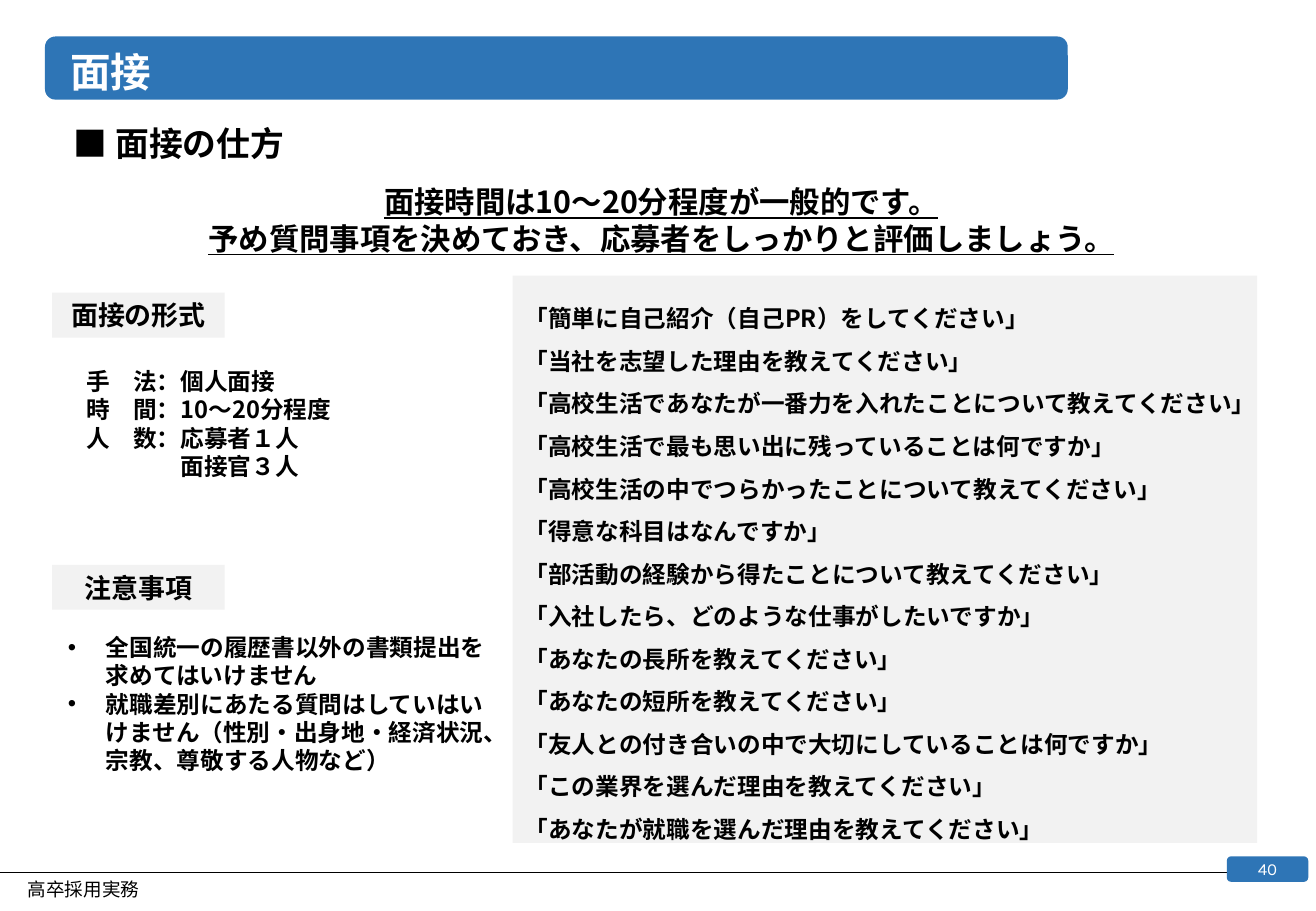
from dataclasses import dataclass

from pptx import Presentation
from pptx.dml.color import RGBColor
from pptx.enum.shapes import MSO_CONNECTOR, MSO_SHAPE
from pptx.enum.text import MSO_ANCHOR, MSO_AUTO_SIZE, PP_ALIGN
from pptx.oxml.ns import qn
from pptx.util import Inches, Pt

COLUMNS, ROWS = 130, 90
CELL = Inches(1 / 12)


@dataclass(frozen=True)
class Theme:
    japanese: str = "Noto Sans CJK JP"
    latin: str = "Karla"
    blue: str = "2E75B6"
    gray: str = "F2F2F2"
    black: str = "000000"
    white: str = "FFFFFF"
    title: int = 24
    heading: int = 20
    lead: int = 18
    label: int = 16
    body: int = 14
    footer: int = 11
    number: int = 10


THEME = Theme()

LEAD = [
    "面接時間は10～20分程度が一般的です。",
    "予め質問事項を決めておき、応募者をしっかりと評価しましょう。",
]
QUESTIONS = [
    "簡単に自己紹介（自己PR）をしてください",
    "当社を志望した理由を教えてください",
    "高校生活であなたが一番力を入れたことについて教えてください",
    "高校生活で最も思い出に残っていることは何ですか",
    "高校生活の中でつらかったことについて教えてください",
    "得意な科目はなんですか",
    "部活動の経験から得たことについて教えてください",
    "入社したら、どのような仕事がしたいですか",
    "あなたの長所を教えてください",
    "あなたの短所を教えてください",
    "友人との付き合いの中で大切にしていることは何ですか",
    "この業界を選んだ理由を教えてください",
    "あなたが就職を選んだ理由を教えてください",
]
FORMAT = ["手　法：個人面接", "時　間：10～20分程度", "人　数：応募者１人", "面接官３人"]
CAUTIONS = [
    "全国統一の履歴書以外の書類提出を求めてはいけません",
    "就職差別にあたる質問はしていはいけません（性別・出身地・経済状況、宗教、尊敬する人物など）",
]


def grid(*cells):
    return [round(cell * CELL) for cell in cells]


def apply(target, values):
    for name, value in values.items():
        setattr(target, name, value)


def indent(para, left, first=0):
    properties = para._p.get_or_add_pPr()
    properties.set("marL", str(Pt(left)))
    properties.set("indent", str(Pt(first)))
    return properties


def add_bullet(para):
    properties = indent(para, 22.5, -22.5)
    properties.append(properties.makeelement(qn("a:buFont"), {"typeface": "Arial"}))
    properties.append(properties.makeelement(qn("a:buChar"), {"char": "•"}))


def write(shape, lines, size, color=THEME.black, face=THEME.japanese,
          align=PP_ALIGN.LEFT, spacing=1.0, anchor=MSO_ANCHOR.TOP,
          bold=True, underline=False, bullets=False):
    frame = shape.text_frame
    apply(frame, {"word_wrap": True, "auto_size": MSO_AUTO_SIZE.NONE,
                  "vertical_anchor": anchor})
    for index, line in enumerate(lines):
        para = frame.add_paragraph() if index else frame.paragraphs[0]
        apply(para, {"alignment": align, "line_spacing": spacing})
        if bullets:
            add_bullet(para)
        span = para.add_run()
        span.text = line
        apply(span.font, {"name": face, "size": Pt(size), "bold": bold,
                          "underline": underline})
        span.font.color.rgb = RGBColor.from_string(color)
        properties = span._r.get_or_add_rPr()
        properties.append(properties.makeelement(qn("a:ea"), {"typeface": face}))
    return frame


def add_panel(page, area, fill, kind=MSO_SHAPE.RECTANGLE):
    panel = page.shapes.add_shape(kind, *grid(*area))
    panel.shadow.inherit = False
    panel.fill.solid()
    panel.fill.fore_color.rgb = RGBColor.from_string(fill)
    panel.line.fill.background()
    return panel


def add_text(page, area, lines, size, **style):
    return write(page.shapes.add_textbox(*grid(*area)), lines, size, **style)


def add_title(page, area, text):
    title = page.shapes.title
    apply(title, dict(zip(("left", "top", "width", "height"), grid(*area))))
    write(title, [text], THEME.title, color=THEME.white, spacing=0.9,
          anchor=MSO_ANCHOR.MIDDLE)


def add_label(page, row, text):
    label = add_panel(page, (5.16, row, 17.04, 4.44), THEME.gray)
    write(label, [text], THEME.label, align=PP_ALIGN.CENTER,
          anchor=MSO_ANCHOR.MIDDLE)


def add_rule(page, row, end):
    rule = page.shapes.add_connector(MSO_CONNECTOR.STRAIGHT, *grid(0, row, end, row))
    rule.line.width = Pt(0.25)
    rule.line.color.rgb = RGBColor.from_string(THEME.black)
    properties = rule._element.spPr
    properties.append(properties.makeelement(qn("a:effectLst"), {}))


def add_number(page, area, number):
    badge = add_panel(page, area, THEME.blue, MSO_SHAPE.ROUNDED_RECTANGLE)
    frame = write(badge, [number], THEME.number, color=THEME.white,
                  face=THEME.latin, align=PP_ALIGN.CENTER,
                  anchor=MSO_ANCHOR.MIDDLE, bold=False)
    apply(frame, {"margin_top": 0, "margin_bottom": 0})


def main():
    deck = Presentation()
    apply(deck, {"slide_width": COLUMNS * CELL, "slide_height": ROWS * CELL})
    page = deck.slides.add_slide(deck.slide_layouts[5])

    banner = add_panel(page, (4.44, 3.6, 101.04, 6.24), THEME.blue,
                       MSO_SHAPE.ROUNDED_RECTANGLE)
    page.shapes.title._element.addprevious(banner._element)
    add_title(page, (5.76, 4.8, 95.52, 5.04), "面接")
    add_text(page, (6.12, 12, 89.64, 4.44), ["■ 面接の仕方"], THEME.heading, spacing=0.9)
    add_text(page, (6.36, 17.52, 117.96, 8.52), LEAD, THEME.lead,
             align=PP_ALIGN.CENTER, underline=True)

    add_panel(page, (50.64, 27.24, 73.56, 56.04), THEME.gray)
    add_text(page, (50.64, 28.08, 76.92, 56.04),
             [f"「{question}」" for question in QUESTIONS], THEME.body, spacing=1.5)

    add_label(page, 28.92, "面接の形式")
    details = add_text(page, (7.32, 35.64, 41.4, 12.48), FORMAT, THEME.body)
    indent(details.paragraphs[-1], 4 * THEME.body)
    add_label(page, 55.8, "注意事項")
    add_text(page, (5.52, 61.92, 44.76, 15.36), CAUTIONS, THEME.body, bullets=True)

    add_rule(page, 86.16, 121.2)
    add_number(page, (121.2, 84.6, 8.04, 2.52), "40")
    add_text(page, (1.56, 86.4, 43.44, 3.6), ["高卒採用実務"], THEME.footer,
             spacing=0.9, bold=False)
    deck.save("out.pptx")


if __name__ == "__main__":
    main()
